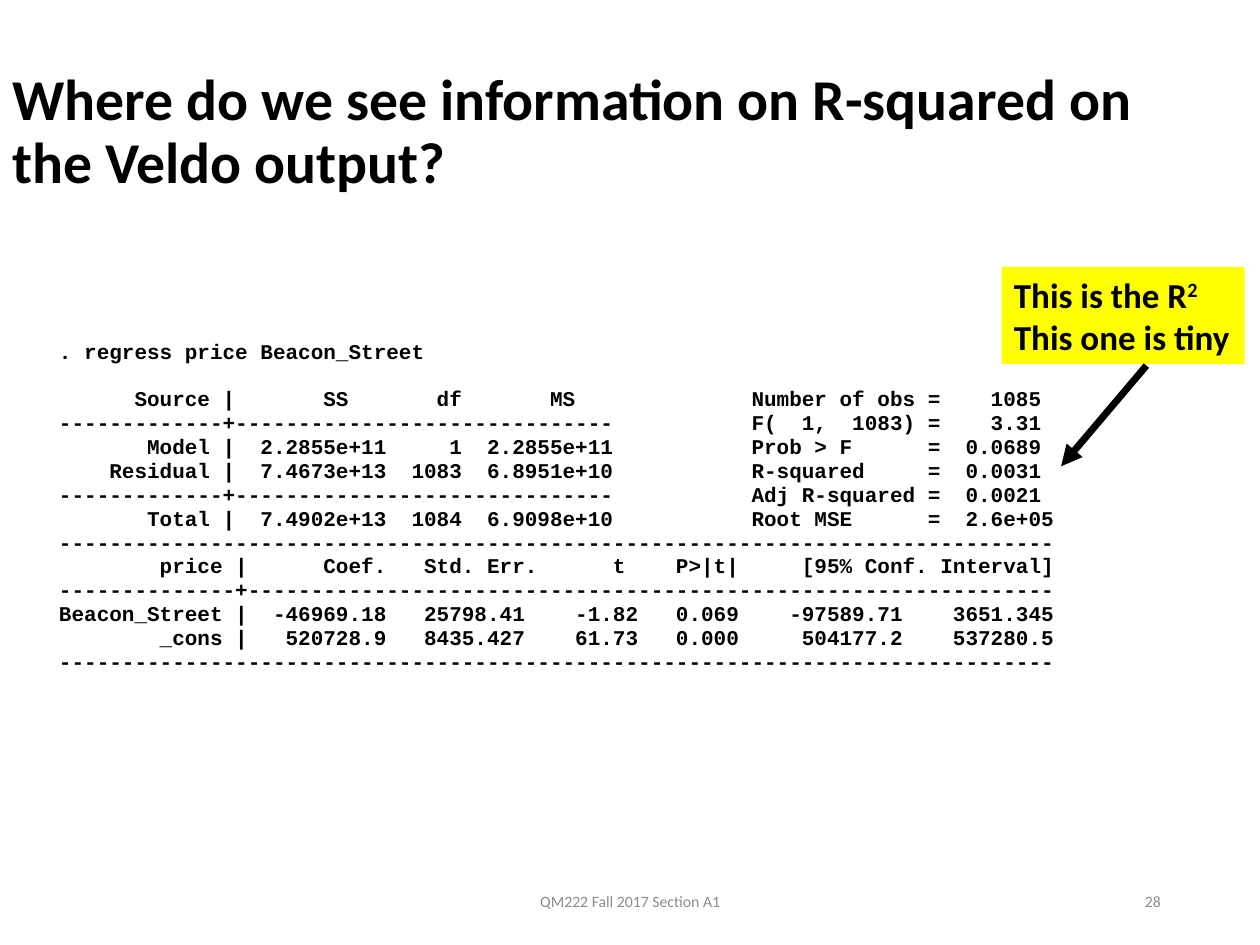
from lxml import etree
from pptx import Presentation
from pptx.dml.color import RGBColor
from pptx.enum.shapes import MSO_CONNECTOR, MSO_SHAPE
from pptx.enum.text import MSO_ANCHOR, PP_ALIGN
from pptx.oxml.ns import qn
from pptx.util import Cm, Pt

LEFT, CENTER, RIGHT = PP_ALIGN.LEFT, PP_ALIGN.CENTER, PP_ALIGN.RIGHT
TOP, MIDDLE = MSO_ANCHOR.TOP, MSO_ANCHOR.MIDDLE
BLACK = RGBColor(0x00, 0x00, 0x00)
GREY = RGBColor(0x8C, 0x8C, 0x8C)
YELLOW = RGBColor(0xFF, 0xFF, 0x00)
SANS, MONO = "Calibri", "Courier New"

# Content
TITLE = "Where do we see information on R-squared on the Veldo output?"
COMMAND = ". regress price Beacon_Street"
RULE = "-" * 79
SPLIT = "-" * 13 + "+" + "-" * 30
# Fixed-width printout: the spaces are part of the program's output
OUTPUT = [
    "      Source |       SS       df       MS              Number of obs =    1085",
    SPLIT + "           F(  1,  1083) =    3.31",
    "       Model |  2.2855e+11     1  2.2855e+11           Prob > F      =  0.0689",
    "    Residual |  7.4673e+13  1083  6.8951e+10           R-squared     =  0.0031",
    SPLIT + "           Adj R-squared =  0.0021",
    "       Total |  7.4902e+13  1084  6.9098e+10           Root MSE      =  2.6e+05",
    RULE,
    "        price |      Coef.   Std. Err.      t    P>|t|     [95% Conf. Interval]",
    "-" * 14 + "+" + "-" * 64,
    "Beacon_Street |  -46969.18   25798.41    -1.82   0.069    -97589.71    3651.345",
    "        _cons |   520728.9   8435.427    61.73   0.000     504177.2    537280.5",
    RULE,
]
CALLOUT = [[("This is the R", False), ("2", True)], [("This one is tiny", False)]]
FOOTERS = [
    ("QM222 Fall 2017 Section A1", 8.41, 8.59, CENTER),
    ("28", 17.93, 5.72, RIGHT),
]


def add_run(p, text, size, font=SANS, color=BLACK, bold=True):
    r = p.add_run()
    r.text = text
    r.font.name, r.font.size, r.font.bold = font, Pt(size), bold
    r.font.color.rgb = color
    return r


def add_box(s, left, top, width, height, anchor=TOP):
    tf = s.shapes.add_textbox(Cm(left), Cm(top), Cm(width), Cm(height)).text_frame
    tf.word_wrap = True
    tf.vertical_anchor = anchor
    return tf


def next_paragraph(tf, i):
    return tf.add_paragraph() if i else tf.paragraphs[0]


prs = Presentation()
prs.slide_width, prs.slide_height = Cm(25.4), Cm(19.05)
s = prs.slides.add_slide(prs.slide_layouts[6])

# Title
p = add_box(s, 0, 0.71, 24.77, 3.96, MIDDLE).paragraphs[0]
p.line_spacing = 0.9
add_run(p, TITLE, 33)

# Regression printout, with a gap after the command
tf = add_box(s, 0.94, 6.76, 22.86, 8.74)
for i, line in enumerate([COMMAND] + OUTPUT):
    p = next_paragraph(tf, i)
    p.line_spacing = 0.9
    p.space_before = Pt(13.7 if i == 1 else 0.75)
    add_run(p, line, 12, MONO)

# Callout
sp = s.shapes.add_shape(MSO_SHAPE.RECTANGLE, Cm(20.19), Cm(5.38), Cm(4.9), Cm(1.96))
sp.shadow.inherit = False
sp.fill.solid()
sp.fill.fore_color.rgb = YELLOW
sp.line.fill.background()
tf = sp.text_frame
tf.word_wrap = False
tf.vertical_anchor = TOP
for i, runs in enumerate(CALLOUT):
    p = next_paragraph(tf, i)
    p.alignment = LEFT
    for text, raised in runs:
        r = add_run(p, text, 20)
        if raised:
            r.font._element.set("baseline", "30000")

# Arrow from the callout to the R-squared value
arrow = s.shapes.add_connector(
    MSO_CONNECTOR.STRAIGHT, Cm(23.11), Cm(7.37), Cm(21.39), Cm(9.4))
arrow.line.color.rgb = BLACK
arrow.line.width = Pt(4)
etree.SubElement(arrow.line._get_or_add_ln(), qn("a:tailEnd"), type="triangle")
etree.SubElement(arrow._element.spPr, qn("a:effectLst"))

# Footer and page number
for text, left, width, align in FOOTERS:
    p = add_box(s, left, 17.65, width, 1.02, MIDDLE).paragraphs[0]
    p.alignment = align
    add_run(p, text, 9, color=GREY, bold=False)

prs.save("out.pptx")
